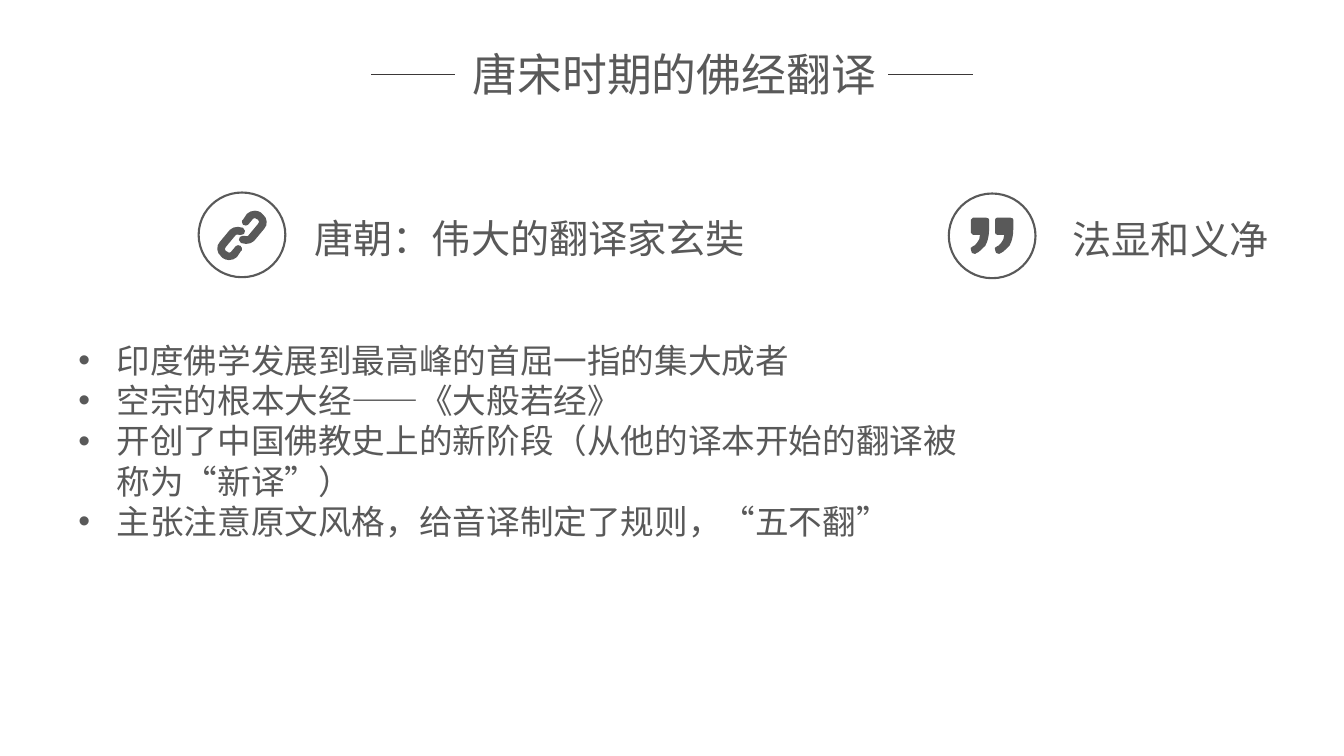
from lxml import etree
from pptx import Presentation
from pptx import util as u
from pptx.dml.color import RGBColor
from pptx.enum import shapes, text
from pptx.oxml.ns import qn

FONT, GREY, RULE_GREY = "Noto Sans CJK SC", "595959", "3B3838"

TITLE = ("唐宋时期的佛经翻译", (4.57, 0.41, 4.24, 0.64))
RULES = [(3.68, 4.51), (8.81, 9.65)]
RULE_Y = 0.74
HEADINGS = [
    ("唐朝：伟大的翻译家玄奘", (3.02, 2.08, 4.52, 0.57)),
    ("法显和义净", (10.54, 2.09, 2.17, 0.57)),
]
RINGS = [(1.97, 1.91), (9.41, 1.92)]
RING_SIZE = (0.86, 0.84)
POINTS = [
    "印度佛学发展到最高峰的首屈一指的集大成者",
    "空宗的根本大经——《大般若经》",
    "开创了中国佛教史上的新阶段（从他的译本开始的翻译被称为“新译”）",
    "主张注意原文风格，给音译制定了规则，“五不翻”",
]
POINTS_BOX = (0.68, 3.32, 9.23, 2.52)

# Outlines: a start point, then lines (x, y) and curves (two controls, end)
CHAIN_BOX = (2.15, 2.09, 0.49, 0.49)
CHAIN_LINK = [
    (2.36, 2.25), (2.38, 2.25, 2.39, 2.25, 2.41, 2.26),
    (2.42, 2.27, 2.42, 2.28, 2.43, 2.29), (2.43, 2.3, 2.42, 2.31, 2.42, 2.32),
    (2.41, 2.33, 2.39, 2.33, 2.37, 2.33), (2.36, 2.32, 2.35, 2.33, 2.34, 2.33),
    (2.24, 2.45), (2.23, 2.46, 2.23, 2.46, 2.23, 2.47),
    (2.23, 2.48, 2.23, 2.48, 2.24, 2.49), (2.26, 2.5),
    (2.26, 2.51, 2.28, 2.51, 2.29, 2.5), (2.34, 2.44),
    (2.35, 2.43, 2.37, 2.43, 2.39, 2.44), (2.39, 2.45),
    (2.4, 2.45, 2.4, 2.46, 2.4, 2.47), (2.4, 2.48, 2.4, 2.49, 2.39, 2.49),
    (2.35, 2.55), (2.33, 2.57, 2.3, 2.58, 2.27, 2.58),
    (2.25, 2.58, 2.22, 2.57, 2.21, 2.56), (2.19, 2.54),
    (2.15, 2.51, 2.14, 2.44, 2.18, 2.4), (2.28, 2.28),
    (2.3, 2.26, 2.33, 2.25, 2.36, 2.25),
]
LINK_TURN = (4.8, 4.67)  # twice the centre of the half turn
QUOTE_BOX = (9.63, 2.16, 0.41, 0.37)
QUOTE_MARK = [
    (9.65, 2.16), (9.78, 2.16), (9.8, 2.16, 9.81, 2.17, 9.81, 2.18),
    (9.81, 2.28), (9.81, 2.33, 9.8, 2.37, 9.79, 2.4),
    (9.78, 2.43, 9.77, 2.45, 9.74, 2.47), (9.72, 2.49, 9.7, 2.51, 9.67, 2.52),
    (9.66, 2.52, 9.65, 2.52, 9.64, 2.51), (9.63, 2.48),
    (9.62, 2.47, 9.63, 2.45, 9.64, 2.45), (9.66, 2.44, 9.68, 2.43, 9.69, 2.41),
    (9.71, 2.39, 9.72, 2.36, 9.72, 2.33), (9.65, 2.33),
    (9.64, 2.33, 9.63, 2.32, 9.63, 2.31), (9.63, 2.18),
    (9.63, 2.17, 9.64, 2.16, 9.65, 2.16),
]
QUOTE_STEP = (0.24, 0)


def colour(value):
    return RGBColor.from_string(value)


def inches(values):
    return [u.Inches(v) for v in values]


def write(shape, lines, size, wrap=False, align=text.PP_ALIGN.LEFT, bullet=False):
    frame = shape.text_frame
    frame.text = "\n".join(lines)
    frame.word_wrap = wrap
    frame.auto_size = text.MSO_AUTO_SIZE.SHAPE_TO_FIT_TEXT
    frame.vertical_anchor = text.MSO_ANCHOR.TOP
    for paragraph in frame.paragraphs:
        paragraph.alignment = align
        font = paragraph.font
        font.name, font.size = FONT, u.Pt(size)
        font.color.rgb = colour(GREY)
        props = paragraph._p.get_or_add_pPr()
        etree.SubElement(props.find(qn("a:defRPr")), qn("a:ea"), typeface=FONT)
        if bullet:
            props.set("marL", str(u.Inches(0.38)))
            props.set("indent", str(-u.Inches(0.38)))
            props.insert(0, etree.Element(qn("a:buFont"), typeface="Arial"))
            props.insert(1, etree.Element(qn("a:buChar"), char="•"))


def moved(outline, sign, offset):
    """Shift an outline (sign 1) or turn it half round (sign -1)."""
    return [tuple(offset[i % 2] + sign * v for i, v in enumerate(segment))
            for segment in outline]


def add_icon(slide, box, outlines):
    # A freeform over the icon's box, whose path then takes the curves
    left, top, width, height = inches(box)
    right, bottom = left + width, top + height
    builder = slide.shapes.build_freeform(left, top)
    builder.add_line_segments([(right, top), (right, bottom), (left, bottom)])
    icon = builder.convert_to_shape()
    icon.shadow.inherit = False
    icon.fill.solid()
    icon.fill.fore_color.rgb = colour(GREY)
    icon.line.fill.background()

    path = next(icon._element.iter(qn("a:path")))
    for command in list(path):
        path.remove(command)
    for outline in outlines:
        for index, segment in enumerate(outline):
            tag = "a:cubicBezTo" if len(segment) == 6 else "a:lnTo" if index else "a:moveTo"
            command = etree.SubElement(path, qn(tag))
            values = inches(segment)
            for x, y in zip(values[::2], values[1::2]):
                etree.SubElement(command, qn("a:pt"), x=str(x - left), y=str(y - top))
        etree.SubElement(path, qn("a:close"))


def main():
    prs = Presentation()
    prs.slide_width, prs.slide_height = inches((13.33, 7.5))
    slide = prs.slides.add_slide(prs.slide_layouts[5])

    # Title between two rules
    title = slide.shapes.title
    title.left, title.top, title.width, title.height = inches(TITLE[1])
    write(title, [TITLE[0]], 32, align=text.PP_ALIGN.CENTER)
    for start, end in RULES:
        rule = slide.shapes.add_connector(
            shapes.MSO_CONNECTOR.STRAIGHT, *inches((start, RULE_Y, end, RULE_Y)))
        rule.line.color.rgb = colour(RULE_GREY)
        rule.line.width = u.Pt(0.5)
        etree.SubElement(rule._element.spPr, qn("a:effectLst"))

    # Headings and bullet points
    for heading, box in HEADINGS:
        write(slide.shapes.add_textbox(*inches(box)), [heading], 28)
    write(slide.shapes.add_textbox(*inches(POINTS_BOX)), POINTS, 24, wrap=True, bullet=True)

    # Ringed icons
    for corner in RINGS:
        ring = slide.shapes.add_shape(shapes.MSO_SHAPE.OVAL, *inches(corner + RING_SIZE))
        ring.rotation = 180
        ring.shadow.inherit = False
        ring.fill.background()
        ring.line.color.rgb = colour(GREY)
        ring.line.width = u.Pt(1.5)
    add_icon(slide, CHAIN_BOX, [CHAIN_LINK, moved(CHAIN_LINK, -1, LINK_TURN)])
    add_icon(slide, QUOTE_BOX, [QUOTE_MARK, moved(QUOTE_MARK, 1, QUOTE_STEP)])

    prs.save("out.pptx")


if __name__ == "__main__":
    main()
